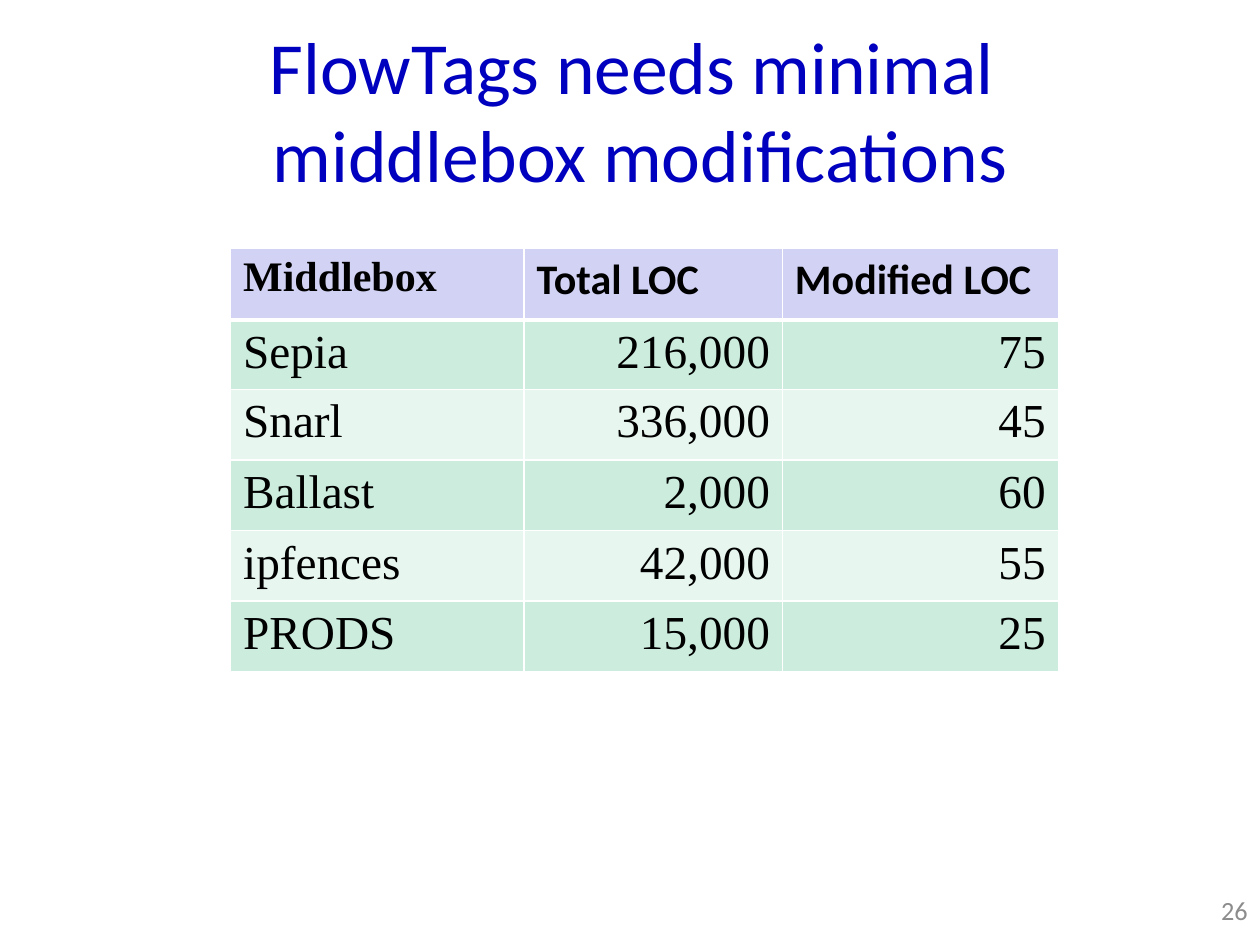
from lxml.etree import SubElement
from pptx import Presentation
from pptx.dml.color import RGBColor
from pptx.enum.text import MSO_ANCHOR as Anchor, PP_ALIGN as Align
from pptx.oxml.ns import qn
from pptx.util import Inches, Pt

COLORS = {
    "title": "0000BF",
    "number": "8C8C8C",
    "text": "000000",
    "border": "FFFFFF",
    "header": "D2D2F4",
    "odd": "CCECDE",
    "even": "E7F6EF",
}
SANS, SERIF = "Calibri", "Times New Roman"
COLUMN_WIDTHS = [2.33, 2.05, 2.19]
ROW_HEIGHTS = [0.57, 0.54] + [0.56] * 4
ROWS = [
    ("Middlebox", "Total LOC", "Modified LOC"),
    ("Sepia", "216,000", "75"),
    ("Snarl", "336,000", "45"),
    ("Ballast", "2,000", "60"),
    ("ipfences", "42,000", "55"),
    ("PRODS", "15,000", "25"),
]


def style_text(frame, size, font, color, align, bold=False):
    for para in frame.paragraphs:
        para.alignment = align
        for span in para.runs:
            span.font.size = Pt(size)
            span.font.name = font
            span.font.bold = bold
            span.font.color.rgb = RGBColor.from_string(COLORS[color])


def add_text(page, bounds, text, size, color, align):
    box = page.shapes.add_textbox(*map(Inches, bounds))
    frame = box.text_frame
    frame.word_wrap = True
    frame.vertical_anchor = Anchor.MIDDLE
    frame.text = text
    style_text(frame, size, SANS, color, align)


def set_borders(cell, top, bottom):
    properties = cell._tc.get_or_add_tcPr()
    widths = {"lnL": 1, "lnR": 1, "lnT": top, "lnB": bottom}
    for index, (side, width) in enumerate(widths.items()):
        line = SubElement(properties, qn(f"a:{side}"), w=str(Pt(width)))
        fill = SubElement(line, qn("a:solidFill"))
        SubElement(fill, qn("a:srgbClr"), val=COLORS["border"])
        properties.insert(index, line)


def fill_cell(cell, text, row, column):
    is_header = row == 0
    cell.text = text
    cell.fill.solid()
    shade = "header" if is_header else "odd" if row % 2 else "even"
    cell.fill.fore_color.rgb = RGBColor.from_string(COLORS[shade])
    set_borders(cell, 3 if row == 1 else 1, 3 if is_header else 1)
    font = SANS if is_header and column else SERIF
    align = Align.LEFT if is_header or column == 0 else Align.RIGHT
    style_text(cell.text_frame, 24 if is_header else 27, font, "text", align, is_header)


def add_code_table(page, left, top):
    size = sum(COLUMN_WIDTHS), sum(ROW_HEIGHTS)
    bounds = map(Inches, (left, top, *size))
    table = page.shapes.add_table(len(ROWS), len(COLUMN_WIDTHS), *bounds).table
    for column, width in zip(table.columns, COLUMN_WIDTHS):
        column.width = Inches(width)
    for row, height in zip(table.rows, ROW_HEIGHTS):
        row.height = Inches(height)
    for row, values in enumerate(ROWS):
        for column, text in enumerate(values):
            fill_cell(table.cell(row, column), text, row, column)


def add_title(page, bounds):
    title = "FlowTags needs minimal \vmiddlebox modifications"
    add_text(page, bounds, title, 42, "title", Align.CENTER)


def add_page_number(page, bounds):
    add_text(page, bounds, "26", 15, "number", Align.RIGHT)


def main():
    deck = Presentation()
    deck.slide_width, deck.slide_height = Inches(10), Inches(7.5)
    page = deck.slides.add_slide(deck.slide_layouts[6])
    add_title(page, (0.16, 0.4, 9.84, 0.93))
    add_page_number(page, (9.5, 6.95, 0.5, 0.55))
    add_code_table(page, 1.83, 1.97)
    deck.save("out.pptx")


if __name__ == "__main__":
    main()
